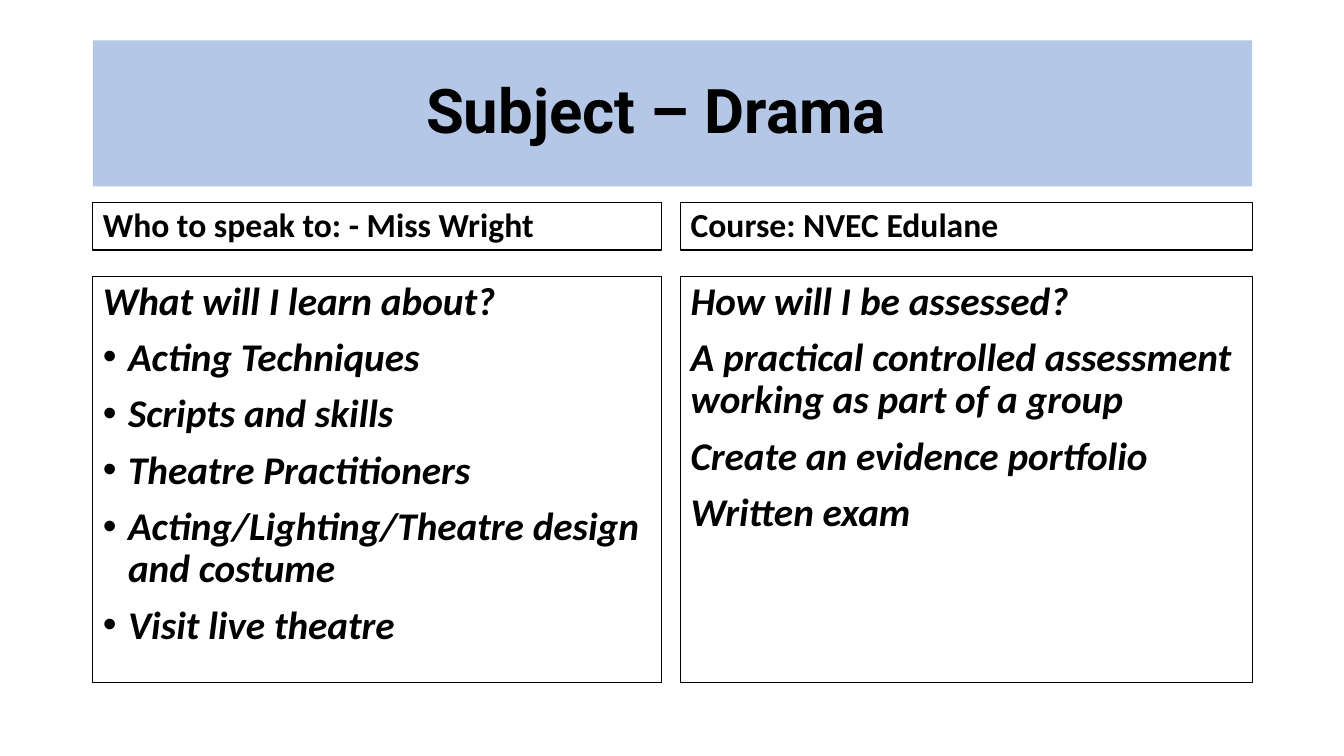
from lxml.etree import SubElement
from pptx import Presentation
from pptx.dml.color import RGBColor
from pptx.enum.text import MSO_ANCHOR, MSO_AUTO_SIZE, PP_ALIGN
from pptx.oxml.ns import qn
from pptx.util import Pt

PX = 9144  # EMU per px, 100 px to the inch
BLACK = RGBColor(0x00, 0x00, 0x00)
WHITE = RGBColor(0xFF, 0xFF, 0xFF)
PALE_BLUE = RGBColor(0xB4, 0xC7, 0xE7)

INSET, TITLE_RIGHT_INSET = 10, 42
HANGING_INDENT = 25
HEADING_HEIGHT, DETAILS_OFFSET, DETAILS_HEIGHT = 47, 73, 403

TITLE_FONT = {"name": "Roboto", "size": Pt(44), "bold": True, "italic": False}
HEADING_FONT = {"name": "Calibri", "size": Pt(24), "bold": True, "italic": False}
DETAILS_FONT = {"name": "Calibri", "size": Pt(28), "bold": True, "italic": True}

LEARNING = {
    "heading": "Who to speak to: - Miss Wright",
    "question": "What will I learn about?",
    "answers": [
        "Acting Techniques",
        "Scripts and skills",
        "Theatre Practitioners",
        "Acting/Lighting/Theatre design and costume",
        "Visit live theatre",
    ],
    "bulleted": True,
}
ASSESSMENT = {
    "heading": "Course: NVEC Edulane",
    "question": "How will I be assessed?",
    "answers": [
        "A practical controlled assessment working as part of a group",
        "Create an evidence portfolio",
        "Written exam",
    ],
    "bulleted": False,
}


def place(holder, box, fill, anchor):
    """Move a placeholder to its box and set its fill and text frame."""
    holder.left, holder.top, holder.width, holder.height = (n * PX for n in box)
    holder.fill.solid()
    holder.fill.fore_color.rgb = fill
    frame_format = {
        "word_wrap": True,
        "auto_size": MSO_AUTO_SIZE.NONE,
        "vertical_anchor": anchor,
        "margin_left": INSET * PX,
        "margin_right": INSET * PX,
    }
    for name, value in frame_format.items():
        setattr(holder.text_frame, name, value)


def outline(holder):
    holder.line.color.rgb = BLACK
    holder.line.width = Pt(1)


def set_bullet(paragraph, bulleted):
    properties = paragraph._p.get_or_add_pPr()
    indent = HANGING_INDENT * PX if bulleted else 0
    properties.set("marL", str(indent))
    properties.set("indent", str(-indent))
    if bulleted:
        SubElement(properties, qn("a:buFont")).set("typeface", "Arial")
        SubElement(properties, qn("a:buChar")).set("char", "•")
    else:
        SubElement(properties, qn("a:buNone"))


def write(holder, lines, font_format, align=PP_ALIGN.LEFT, bulleted=False):
    """Fill a placeholder; bullets, if any, start after the first line."""
    frame = holder.text_frame
    for index, line in enumerate(lines):
        paragraph = frame.add_paragraph() if index else frame.paragraphs[0]
        paragraph.alignment = align
        paragraph.line_spacing = 0.9
        paragraph.space_before = Pt(10 if index else 0)
        set_bullet(paragraph, bulleted and index > 0)
        run = paragraph.add_run()
        run.text = line
        run.font.color.rgb = BLACK
        for name, value in font_format.items():
            setattr(run.font, name, value)


def add_title(title, box):
    place(title, box, PALE_BLUE, MSO_ANCHOR.MIDDLE)
    title.text_frame.margin_right = TITLE_RIGHT_INSET * PX
    write(title, ["Subject – Drama"], TITLE_FONT, PP_ALIGN.CENTER)


def add_column(heading, details, content, left, top, width):
    """A one-line heading box above a box with a question and its answers."""
    place(heading, (left, top, width, HEADING_HEIGHT), WHITE, MSO_ANCHOR.BOTTOM)
    write(heading, [content["heading"]], HEADING_FONT)
    place(details, (left, top + DETAILS_OFFSET, width, DETAILS_HEIGHT),
          WHITE, MSO_ANCHOR.TOP)
    write(details, [content["question"], *content["answers"]], DETAILS_FONT,
          bulleted=content["bulleted"])
    for holder in (heading, details):
        outline(holder)


def main():
    deck = Presentation()
    deck.slide_width, deck.slide_height = 1333 * PX, 750 * PX
    comparison = deck.slide_layouts.get_by_name("Comparison")
    slide = deck.slides.add_slide(comparison)
    title, *holders = slide.placeholders
    left_heading, left_details, right_heading, right_details = holders

    add_title(title, (92, 40, 1150, 145))
    add_column(left_heading, left_details, LEARNING, 92, 201, 564)
    add_column(right_heading, right_details, ASSESSMENT, 675, 201, 567)
    deck.save("out.pptx")


if __name__ == "__main__":
    main()
